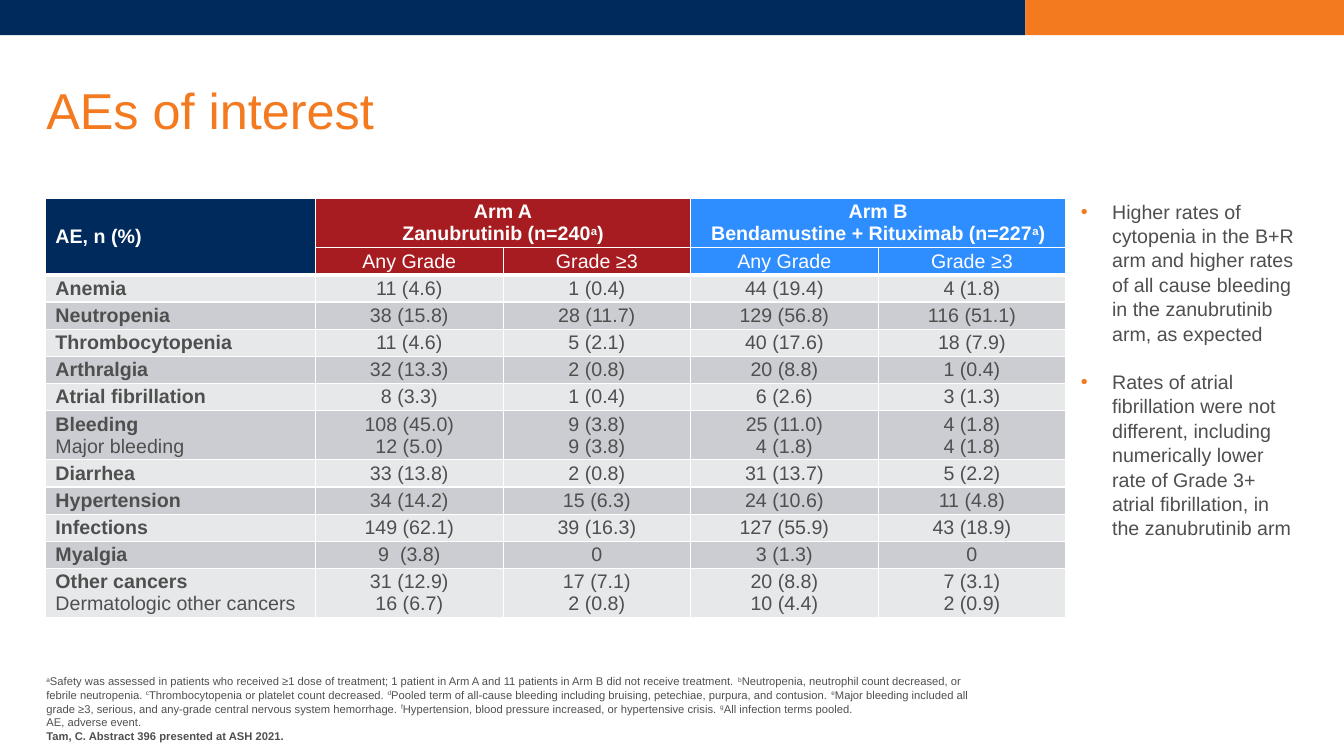
import pptx
import pptx.dml.color
import pptx.enum.shapes
import pptx.enum.text
import pptx.oxml
import pptx.oxml.ns
import pptx.util
from pptx.util import Inches

NAVY, ORANGE, RED, BLUE = "002A5C", "F47A20", "A71C20", "2E8DFF"
GREY, LIGHT, DARK, WHITE = "4E4F4E", "E7E8EA", "CCCDD2", "FFFFFF"
ANCHOR = pptx.enum.text.MSO_ANCHOR
CENTER = pptx.enum.text.PP_ALIGN.CENTER


def color(value):
    return pptx.dml.color.RGBColor.from_string(value)


def write(frame, lines, size, ink, bold=(), align=None, spacing=None, bullet=False):
    """Fill a frame; text between carets is superscript, bold lists bold line numbers."""
    frame.word_wrap = True
    for number, line in enumerate(lines):
        para = frame.paragraphs[0] if number == 0 else frame.add_paragraph()
        para.alignment = align
        if spacing:
            para.line_spacing = spacing
        if bullet:
            props = para._p.get_or_add_pPr()
            props.set("marL", str(Inches(0.31)))
            props.set("indent", str(-Inches(0.31)))
            for tag in (f'<a:buClr {{}}><a:srgbClr val="{ORANGE}"/></a:buClr>',
                        '<a:buFont {} typeface="Arial"/>', '<a:buChar {} char="•"/>'):
                props.append(pptx.oxml.parse_xml(tag.format(pptx.oxml.ns.nsdecls("a"))))
            if number:
                para.space_before = pptx.util.Pt(16.8)
        para.font.name = "Arial"
        para.font.size = pptx.util.Pt(size)
        para.font.bold = number in bold
        para.font.color.rgb = color(ink)
        for part, text in enumerate(line.split("^")):
            if text:
                span = para.add_run()
                span.text = text
                if part % 2:
                    span._r.get_or_add_rPr().set("baseline", "30000")


deck = pptx.Presentation()
deck.slide_width, deck.slide_height = Inches(13.33), Inches(7.5)
page = deck.slides.add_slide(deck.slide_layouts[6])

for left, width, fill in ((0, 10.17, NAVY), (10.17, 3.16, ORANGE)):
    band = page.shapes.add_shape(pptx.enum.shapes.MSO_SHAPE.RECTANGLE,
                                 Inches(left), 0, Inches(width), Inches(0.35))
    band.shadow.inherit = False
    band.fill.solid()
    band.fill.fore_color.rgb = color(fill)
    band.line.fill.background()

title = ["AEs of interest"]
footnotes = [
    "^a^Safety was assessed in patients who received ≥1 dose of treatment; 1 patient in Arm A and "
    "11 patients in Arm B did not receive treatment. ^b^Neutropenia, neutrophil count decreased, or "
    "febrile neutropenia. ^c^Thrombocytopenia or platelet count decreased. ^d^Pooled term of "
    "all-cause bleeding including bruising, petechiae, purpura, and contusion. ^e^Major bleeding "
    "included all grade ≥3, serious, and any-grade central nervous system hemorrhage. "
    "^f^Hypertension, blood pressure increased, or hypertensive crisis. ^g^All infection terms pooled.",
    "AE, adverse event.",
    "Tam, C. Abstract 396 presented at ASH 2021.",
]
findings = [
    "Higher rates of cytopenia in the B+R arm and higher rates of all cause bleeding in the "
    "zanubrutinib arm, as expected",
    "Rates of atrial fibrillation were not different, including numerically lower rate of "
    "Grade 3+ atrial fibrillation, in the zanubrutinib arm",
]
for place, anchor, lines, style in (
    ((0.46, 0.4, 12.43, 1.45), ANCHOR.MIDDLE, title, dict(size=36, ink=ORANGE, spacing=0.9)),
    ((0.46, 6.95, 9.37, 0.42), ANCHOR.BOTTOM, footnotes,
     dict(size=8, ink=GREY, bold=(2,), spacing=1.03)),
    ((10.72, 1.97, 2.19, 3.98), ANCHOR.TOP, findings,
     dict(size=14, ink=GREY, spacing=1.04, bullet=True)),
):
    frame = page.shapes.add_textbox(*map(Inches, place)).text_frame
    frame.margin_left = frame.margin_right = frame.margin_top = frame.margin_bottom = 0
    frame.vertical_anchor = anchor
    write(frame, lines, **style)

rows = [
    ("AE, n (%)", "Arm A\nZanubrutinib (n=240^a^)", "",
     "Arm B\nBendamustine + Rituximab (n=227^a^)", ""),
    ("", "Any Grade", "Grade ≥3", "Any Grade", "Grade ≥3"),
    ("Anemia", "11 (4.6)", "1 (0.4)", "44 (19.4)", "4 (1.8)"),
    ("Neutropenia", "38 (15.8)", "28 (11.7)", "129 (56.8)", "116 (51.1)"),
    ("Thrombocytopenia", "11 (4.6)", "5 (2.1)", "40 (17.6)", "18 (7.9)"),
    ("Arthralgia", "32 (13.3)", "2 (0.8)", "20 (8.8)", "1 (0.4)"),
    ("Atrial fibrillation", "8 (3.3)", "1 (0.4)", "6 (2.6)", "3 (1.3)"),
    ("Bleeding\nMajor bleeding", "108 (45.0)\n12 (5.0)", "9 (3.8)\n9 (3.8)",
     "25 (11.0)\n4 (1.8)", "4 (1.8)\n4 (1.8)"),
    ("Diarrhea", "33 (13.8)", "2 (0.8)", "31 (13.7)", "5 (2.2)"),
    ("Hypertension", "34 (14.2)", "15 (6.3)", "24 (10.6)", "11 (4.8)"),
    ("Infections", "149 (62.1)", "39 (16.3)", "127 (55.9)", "43 (18.9)"),
    ("Myalgia", "9  (3.8)", "0", "3 (1.3)", "0"),
    ("Other cancers\nDermatologic other cancers", "31 (12.9)\n16 (6.7)", "17 (7.1)\n2 (0.8)",
     "20 (8.8)\n10 (4.4)", "7 (3.1)\n2 (0.9)"),
]
header_fills = (NAVY, RED, RED, BLUE, BLUE)
table = page.shapes.add_table(len(rows), 5, Inches(0.45), Inches(1.97),
                              Inches(10.12), Inches(4.02)).table
table.first_row = table.horz_banding = False
for column, grid_column in enumerate(table.columns):
    grid_column.width = Inches(1.86 if column else 2.68)
table.cell(0, 0).merge(table.cell(1, 0))
table.cell(0, 1).merge(table.cell(0, 2))
table.cell(0, 3).merge(table.cell(0, 4))

for row, texts in enumerate(rows):
    header = row < 2
    table.rows[row].height = Inches(0.44 if "\n" in "".join(texts) else 0.27)
    for column, text in enumerate(texts):
        cell = table.cell(row, column)
        cell.margin_left = cell.margin_right = Inches(0.1)
        cell.margin_top = cell.margin_bottom = Inches(0.01)
        cell.vertical_anchor = ANCHOR.MIDDLE
        for side in "LRTB":
            thick = (row, side) in ((1, "B"), (2, "T"))
            cell._tc.get_or_add_tcPr().append(pptx.oxml.parse_xml(
                f'<a:ln{side} {pptx.oxml.ns.nsdecls("a")} w="{pptx.util.Pt(3 if thick else 1)}">'
                f'<a:solidFill><a:srgbClr val="{WHITE}"/></a:solidFill></a:ln{side}>'))
        cell.fill.solid()
        cell.fill.fore_color.rgb = color(
            header_fills[column] if header else DARK if row % 2 else LIGHT)
        if text:
            bold = (0, 1) if row == 0 else (0,) if column == 0 else ()
            write(cell.text_frame, text.split("\n"), 14, WHITE if header else GREY,
                  bold, CENTER if column else None)

deck.save("out.pptx")
